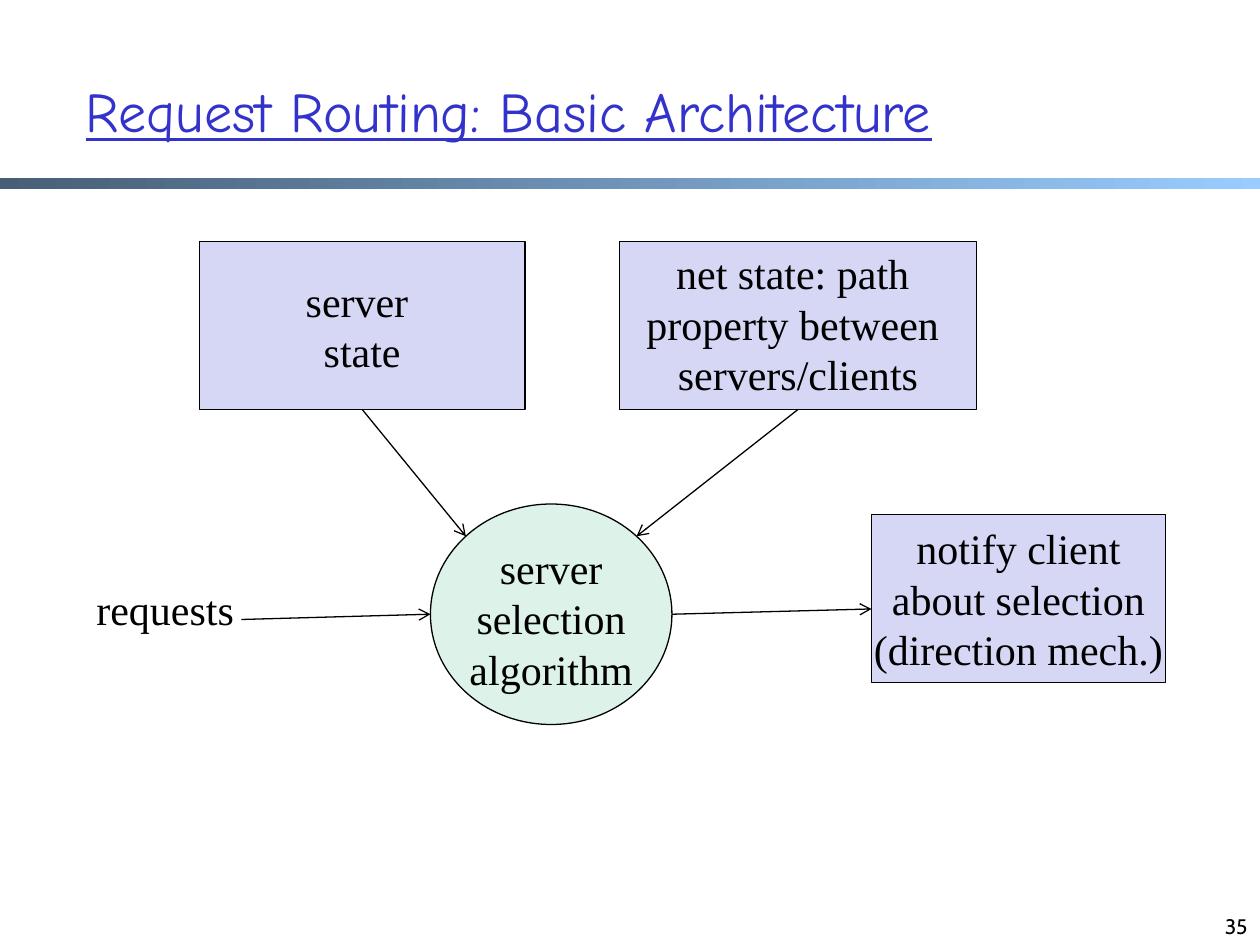
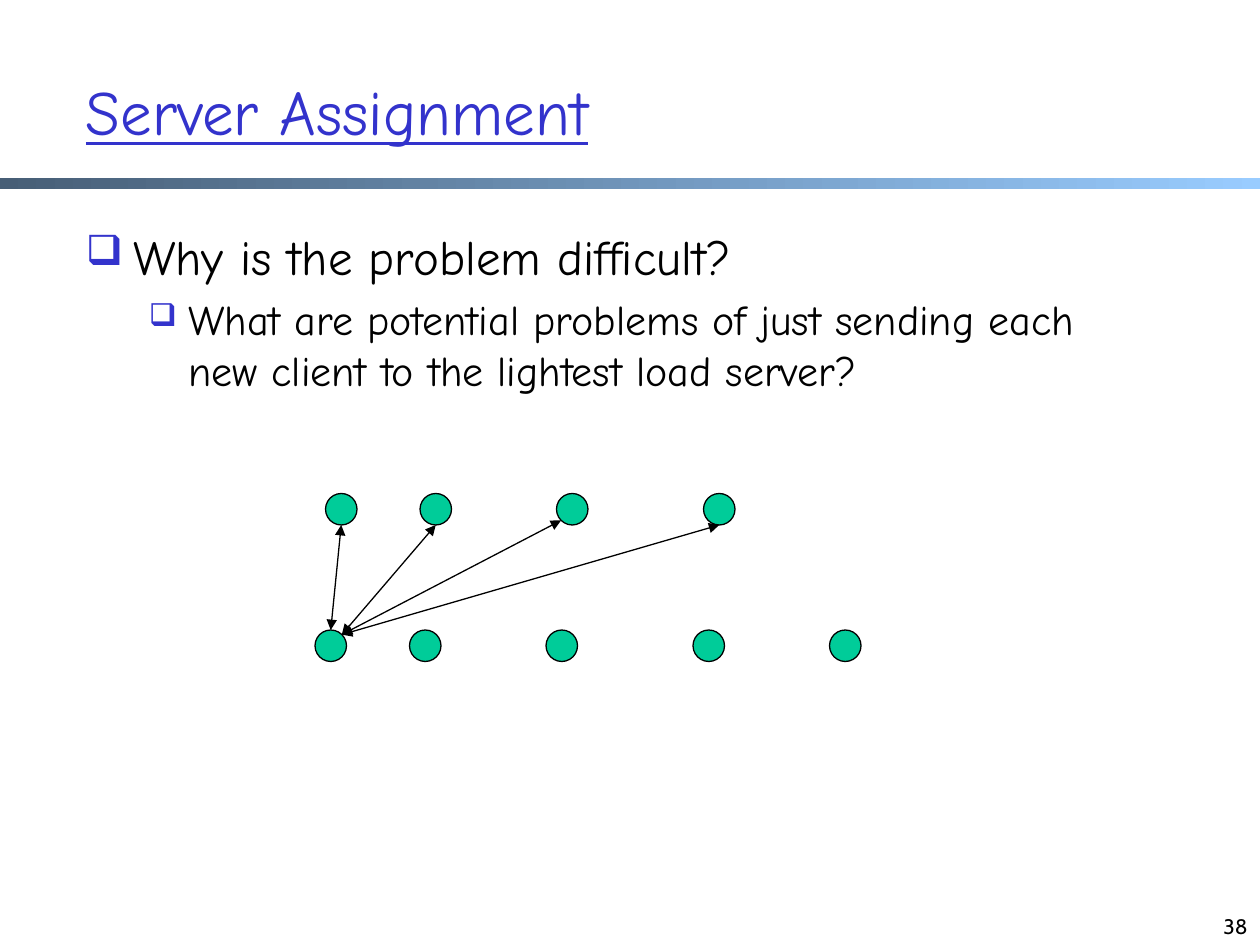
"""Build two slides on request routing and server assignment."""
import math

from lxml import etree
from pptx import Presentation
from pptx import util as u
from pptx.dml import color as dml
from pptx.enum import shapes, text
from pptx.oxml import ns

INK, TITLE_BLUE = "000000", "3333CC"
BAND_START, BAND_END = "475E76", "99CCFF"
BOX_FILL, ALGORITHM_FILL, NODE_FILL = "D6D6F5", "DDF3EA", "00CC99"
HEADING_FONT, DIAGRAM_FONT, NUMBER_FONT = "Comic Neue", "Times New Roman", "Cabin"
LEFT, CENTER, RIGHT = text.PP_ALIGN.LEFT, text.PP_ALIGN.CENTER, text.PP_ALIGN.RIGHT
TOP, MIDDLE, BOTTOM = (text.MSO_ANCHOR.TOP, text.MSO_ANCHOR.MIDDLE,
                       text.MSO_ANCHOR.BOTTOM)
RECTANGLE, OVAL = shapes.MSO_SHAPE.RECTANGLE, shapes.MSO_SHAPE.OVAL
NODE_SIZE = 18


def rgb(code):
    """Turn a hex string into a colour."""
    return dml.RGBColor.from_string(code)


def points(*lengths):
    """Turn plain numbers into lengths in points."""
    return [u.Pt(length) for length in lengths]


def add_xml(parent, tag, **attributes):
    """Append a DrawingML element with attributes to a parent."""
    element = etree.SubElement(parent, ns.qn(tag))
    for name, value in attributes.items():
        element.set(name, str(value))
    return element


def format_para(para, size, font, color=INK, underline=False, align=LEFT):
    """Give a paragraph its alignment and its spans their font."""
    para.alignment = align
    for span in para.runs:
        span.font.size = u.Pt(size)
        span.font.name = font
        span.font.color.rgb = rgb(color)
        span.font.underline = underline


def write(box, wording, anchor=TOP, wrap=True, **style):
    """Write one paragraph per line of wording into a box."""
    frame = box.text_frame
    frame.word_wrap = wrap
    frame.vertical_anchor = anchor
    frame.text = wording
    for para in frame.paragraphs:
        format_para(para, **style)


def add_text(slide, area, wording, **style):
    """Add a text box with formatted wording."""
    box = slide.shapes.add_textbox(*points(*area))
    write(box, wording, **style)
    return box


def add_figure(canvas, kind, area, fill):
    """Add a filled and thinly outlined preset shape."""
    figure = canvas.add_shape(kind, *points(*area))
    figure.shadow.inherit = False
    figure.fill.solid()
    figure.fill.fore_color.rgb = rgb(fill)
    figure.line.color.rgb = rgb(INK)
    figure.line.width = u.Pt(0.75)
    return figure


def add_step(slide, kind, area, fill, wording, anchor=MIDDLE):
    """Add a labelled step of the architecture diagram."""
    step = add_figure(slide.shapes, kind, area, fill)
    write(step, wording, anchor=anchor, wrap=False, size=24,
          font=DIAGRAM_FONT, align=CENTER)
    return step


def rim(oval, degrees):
    """Return the point on an oval's outline, clockwise from the right."""
    angle = math.radians(degrees)
    x = oval.left + oval.width / 2 * (1 + math.cos(angle))
    y = oval.top + oval.height / 2 * (1 + math.sin(angle))
    return round(x / u.Pt(1), 2), round(y / u.Pt(1), 2)


def add_arrow(canvas, start, end, head=None, tail=None):
    """Add a straight line with arrowheads at its start and end."""
    arrow = canvas.add_connector(shapes.MSO_CONNECTOR.STRAIGHT,
                                 *points(*start, *end))
    arrow.line.color.rgb = rgb(INK)
    arrow.line.width = u.Pt(0.75)
    properties = arrow.element.spPr
    line = properties.find(ns.qn("a:ln"))
    for tag, style in (("a:headEnd", head), ("a:tailEnd", tail)):
        if style:
            add_xml(line, tag, type=style)
    add_xml(properties, "a:effectLst")
    return arrow


def add_bullet(para, margin, hanging, percent):
    """Give a paragraph a hanging square bullet."""
    properties = para._p.get_or_add_pPr()
    properties.set("marL", str(u.Pt(margin)))
    properties.set("indent", str(-u.Pt(hanging)))
    color = add_xml(properties, "a:buClr")
    add_xml(color, "a:srgbClr", val=TITLE_BLUE)
    add_xml(properties, "a:buSzPct", val=percent * 1000)
    add_xml(properties, "a:buChar", char="❑")


def add_band(slide):
    """Draw the gradient band under the title."""
    band = slide.shapes.add_shape(RECTANGLE, *points(0, 101.75, 720, 6))
    band.shadow.inherit = False
    band.line.fill.background()
    band.fill.gradient()
    band.fill.gradient_angle = 0
    for stop, code, position in zip(band.fill.gradient_stops,
                                    (BAND_START, BAND_END), (0, 1)):
        stop.color.rgb = rgb(code)
        stop.position = position


def add_page(deck, title, title_size, number):
    """Add a blank slide with band, title and page number."""
    slide = deck.slides.add_slide(deck.slide_layouts[6])
    add_band(slide)
    add_text(slide, (42, 18, 612, 90), title, anchor=MIDDLE, size=title_size,
             font=HEADING_FONT, color=TITLE_BLUE, underline=True)
    add_text(slide, (552, 504, 168, 36), number, anchor=BOTTOM, size=12,
             font=NUMBER_FONT, align=RIGHT)
    return slide


def add_architecture(deck):
    """Build the request routing diagram."""
    slide = add_page(deck, "Request Routing: Basic Architecture", 32, "35")
    server_state = add_step(slide, RECTANGLE, (114, 138, 186, 96), BOX_FILL,
                            "server \nstate")
    net_state = add_step(slide, RECTANGLE, (354, 138, 204, 96), BOX_FILL,
                         "net state: path \vproperty between \vservers/clients",
                         anchor=TOP)
    algorithm = add_step(slide, OVAL, (246, 288, 138, 126), ALGORITHM_FILL,
                         "server\nselection\valgorithm", anchor=TOP)
    add_step(slide, RECTANGLE, (498, 294, 168, 96), BOX_FILL,
             "notify client\nabout selection\v(direction mech.)")
    add_text(slide, (48, 330, 94, 36), "requests", wrap=False, size=24,
             font=DIAGRAM_FONT)
    for state, degrees in ((server_state, 225), (net_state, 315)):
        target = rim(algorithm, degrees)
        arrow = add_arrow(slide.shapes, target, target, tail="arrow")
        arrow.begin_connect(state, 2)
    add_arrow(slide.shapes, (138, 354), rim(algorithm, 180), tail="arrow")
    add_arrow(slide.shapes, rim(algorithm, 0), (498, 348), tail="arrow")


def add_questions(slide):
    """Add the bulleted question and its follow-up."""
    box = add_text(slide, (42, 126, 612, 366),
                   "Why is the problem difficult?\n"
                   "What are potential problems of just sending each "
                   "new client to the lightest load server?",
                   size=28, font=HEADING_FONT)
    levels = ((28, 27, 27, 85), (24, 58.5, 22.5, 75))
    for level, (para, layout) in enumerate(zip(box.text_frame.paragraphs, levels)):
        size, margin, hanging, percent = layout
        format_para(para, size, HEADING_FONT)
        para.level = level
        para.space_before = u.Pt(size * 0.2)
        add_bullet(para, margin, hanging, percent)


def add_nodes(canvas, lefts, top):
    """Add a row of round nodes."""
    return [add_figure(canvas, OVAL, (left, top, NODE_SIZE, NODE_SIZE), NODE_FILL)
            for left in lefts]


def add_assignment(deck):
    """Build the server assignment slide."""
    slide = add_page(deck, "Server Assignment", 36, "38")
    add_questions(slide)
    network = slide.shapes.add_group_shape().shapes
    upper = add_nodes(network, (186, 240, 318, 402), 282)
    lower = add_nodes(network, (180, 234, 312, 396, 474), 360)
    angles = ((270, 90), (315, 90), (315, 135), (315, 90))
    for node, (start, end) in zip(upper, angles):
        add_arrow(network, rim(lower[0], start), rim(node, end),
                  head="triangle", tail="triangle")


def main():
    """Build and save the deck."""
    deck = Presentation()
    deck.slide_width, deck.slide_height = points(720, 540)
    add_architecture(deck)
    add_assignment(deck)
    deck.save("out.pptx")


if __name__ == "__main__":
    main()
